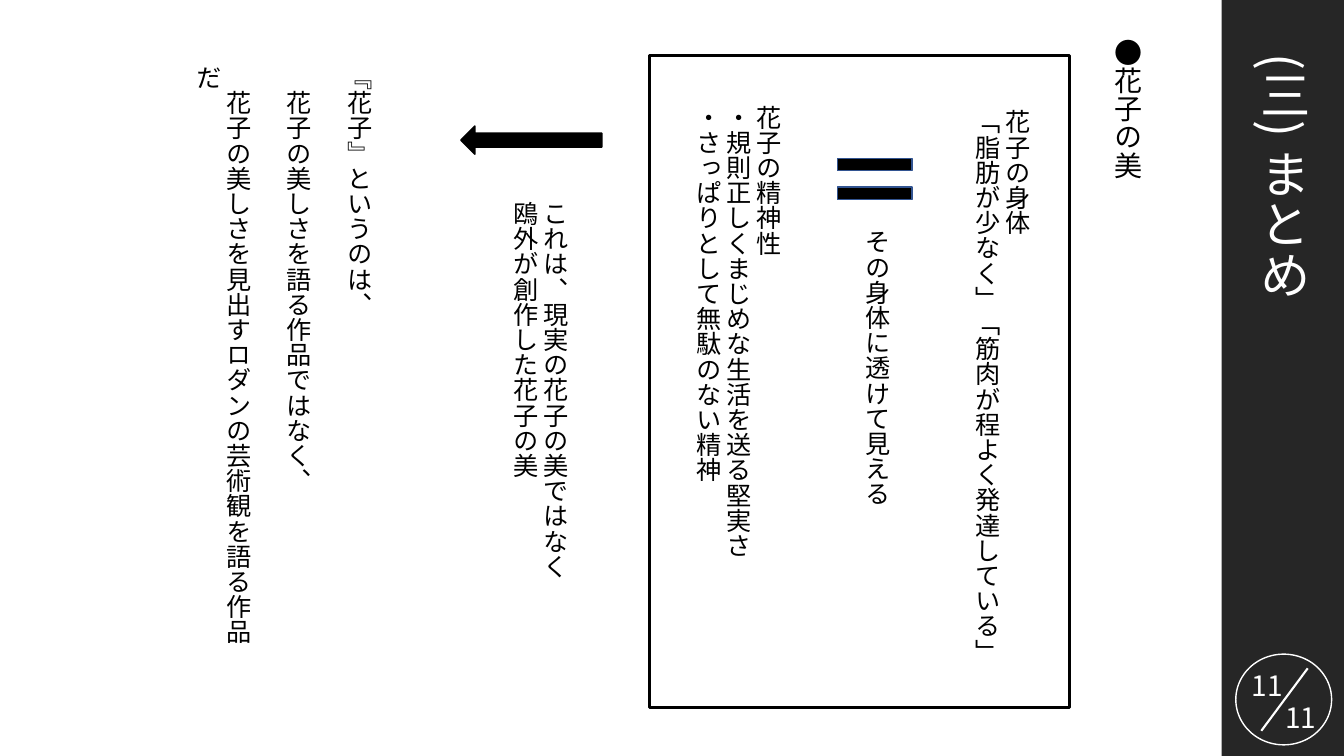
import dataclasses

import lxml.etree
import pptx
import pptx.dml.color
import pptx.enum.lang
import pptx.enum.shapes
import pptx.enum.text
import pptx.oxml.ns
import pptx.util

SHAPE = pptx.enum.shapes.MSO_SHAPE
ALIGN = pptx.enum.text.PP_ALIGN
WIDTH = pptx.util.Inches(13.33)
HEIGHT = pptx.util.Inches(7.5)


@dataclasses.dataclass(frozen=True)
class Theme:
    font: str = "Noto Sans CJK JP"
    ink: str = "000000"
    paper: str = "FFFFFF"
    panel: str = "262626"
    edge: str = "325491"
    title_size: float = 36
    heading_size: float = 20
    text_size: float = 18
    column_gap: float = 21.5


THEME = Theme()


def across(percent):
    return round(WIDTH * percent / 100)


def down(percent):
    return round(HEIGHT * percent / 100)


def place(area):
    left, top, width, height = area
    return across(left), down(top), across(width), down(height)


def rgb(color):
    return pptx.dml.color.RGBColor.from_string(color)


def add_child(parent, tag, **attributes):
    return lxml.etree.SubElement(parent, pptx.oxml.ns.qn(tag), attributes)


def style_run(run, size, color):
    run.font.name = THEME.font
    run.font.size = pptx.util.Pt(size)
    run.font.color.rgb = rgb(color)
    run.font.language_id = pptx.enum.lang.MSO_LANGUAGE_ID.JAPANESE
    add_child(run.font._element, "a:ea", typeface=THEME.font)


def fill_text(box, lines, size, color, vertical=True, align=ALIGN.LEFT, gap=0):
    frame = box.text_frame
    frame.text = "\n".join(lines)
    frame.word_wrap = True
    frame.auto_size = pptx.enum.text.MSO_AUTO_SIZE.SHAPE_TO_FIT_TEXT
    frame.vertical_anchor = pptx.enum.text.MSO_ANCHOR.TOP
    if vertical:
        frame._txBody.bodyPr.set("vert", "eaVert")
    for index, para in enumerate(frame.paragraphs):
        para.alignment = align
        para.line_spacing = 1.0
        para.space_before = pptx.util.Pt(gap if index else 0)
        for run in para.runs:
            style_run(run, size, color)


def add_text(slide, area, lines, size=THEME.text_size, color=THEME.ink, **options):
    box = slide.shapes.add_textbox(*place(area))
    fill_text(box, lines, size, color, **options)


def use_placeholder(slide, holder, area, lines, size, color):
    holder.left, holder.top, holder.width, holder.height = place(area)
    fill_text(holder, lines, size, color)
    for para in holder.text_frame.paragraphs:
        properties = para._p.get_or_add_pPr()
        properties.set("marL", "0")
        properties.set("indent", "0")
        add_child(properties, "a:buNone")
    slide.shapes._spTree.append(holder._element)


def add_figure(slide, preset, area, fill=None, line=None, weight=1):
    figure = slide.shapes.add_shape(preset, *place(area))
    figure.shadow.inherit = False
    if fill:
        figure.fill.solid()
        figure.fill.fore_color.rgb = rgb(fill)
    else:
        figure.fill.background()
    if line:
        figure.line.color.rgb = rgb(line)
        figure.line.width = pptx.util.Pt(weight)
    else:
        figure.line.fill.background()
    return figure


def add_line(slide, start, end, color, weight):
    line = slide.shapes.add_connector(
        pptx.enum.shapes.MSO_CONNECTOR.STRAIGHT,
        across(start[0]), down(start[1]), across(end[0]), down(end[1]),
    )
    line.line.color.rgb = rgb(color)
    line.line.width = pptx.util.Pt(weight)
    add_child(line._element.spPr, "a:effectLst")


def add_sidebar(slide):
    add_figure(slide, SHAPE.RECTANGLE, (90.9, 0, 9.1, 100), THEME.panel)
    add_figure(slide, SHAPE.FLOWCHART_CONNECTOR, (91.95, 86.53, 7.13, 12),
               THEME.panel, THEME.paper)
    add_line(slide, (93.85, 96.67), (97.3, 88.4), THEME.paper, 1.5)
    for left, top in ((94.45, 92), (91.95, 87.73)):
        add_text(slide, (left, top, 4.65, 5.87), ["11"], THEME.heading_size,
                 THEME.paper, vertical=False, align=ALIGN.CENTER)
    use_placeholder(slide, slide.shapes.title, (92.42, 6.4, 6.08, 76.4),
                    ["(三) まとめ"], THEME.title_size, THEME.paper)


def add_beauty_frame(slide):
    add_text(slide, (81.47, 3.87, 4.05, 84.53), ["●花子の美"], THEME.heading_size)
    add_figure(slide, SHAPE.RECTANGLE, (48.31, 7.33, 31.28, 86.27),
               line=THEME.ink, weight=2.25)
    add_text(slide, (71.12, 13.2, 6.08, 78.93),
             ["花子の身体", "「脂肪が少なく」「筋肉が程よく発達している」"])
    equals = add_figure(slide, SHAPE.MATH_EQUAL, (61.29, 19.6, 7.58, 8.13),
                        THEME.ink, THEME.edge)
    equals.adjustments[0] = 0.2
    equals.adjustments[1] = 0.27
    add_text(slide, (63.02, 29.07, 3.75, 42), ["その身体に透けて見える"])
    use_placeholder(slide, slide.placeholders[1], (50.71, 13.2, 8.33, 64.93),
                    ["花子の精神性", "・規則正しくまじめな生活を送る堅実さ",
                     "・さっぱりとして無駄のない精神"],
                    THEME.text_size, THEME.ink)


def add_conclusion(slide):
    arrow = add_figure(slide, SHAPE.RIGHT_ARROW, (34.28, 16.67, 10.5, 3.73),
                       THEME.ink, THEME.ink)
    arrow.rotation = 180
    add_text(slide, (36.76, 25.33, 6.08, 61.2),
             ["これは、現実の花子の美ではなく", "鴎外が創作した花子の美"])
    add_text(slide, (15.3, 7.33, 12.9, 82),
             ["『花子』というのは、", "　花子の美しさを語る作品ではなく、",
              "　花子の美しさを見出すロダンの芸術観を語る作品だ"],
             gap=THEME.column_gap)


def main():
    deck = pptx.Presentation()
    deck.slide_width = WIDTH
    deck.slide_height = HEIGHT
    page = deck.slides.add_slide(deck.slide_layouts[1])
    page.background.fill.solid()
    page.background.fill.fore_color.rgb = rgb(THEME.paper)
    add_sidebar(page)
    add_beauty_frame(page)
    add_conclusion(page)
    deck.save("out.pptx")


if __name__ == "__main__":
    main()
